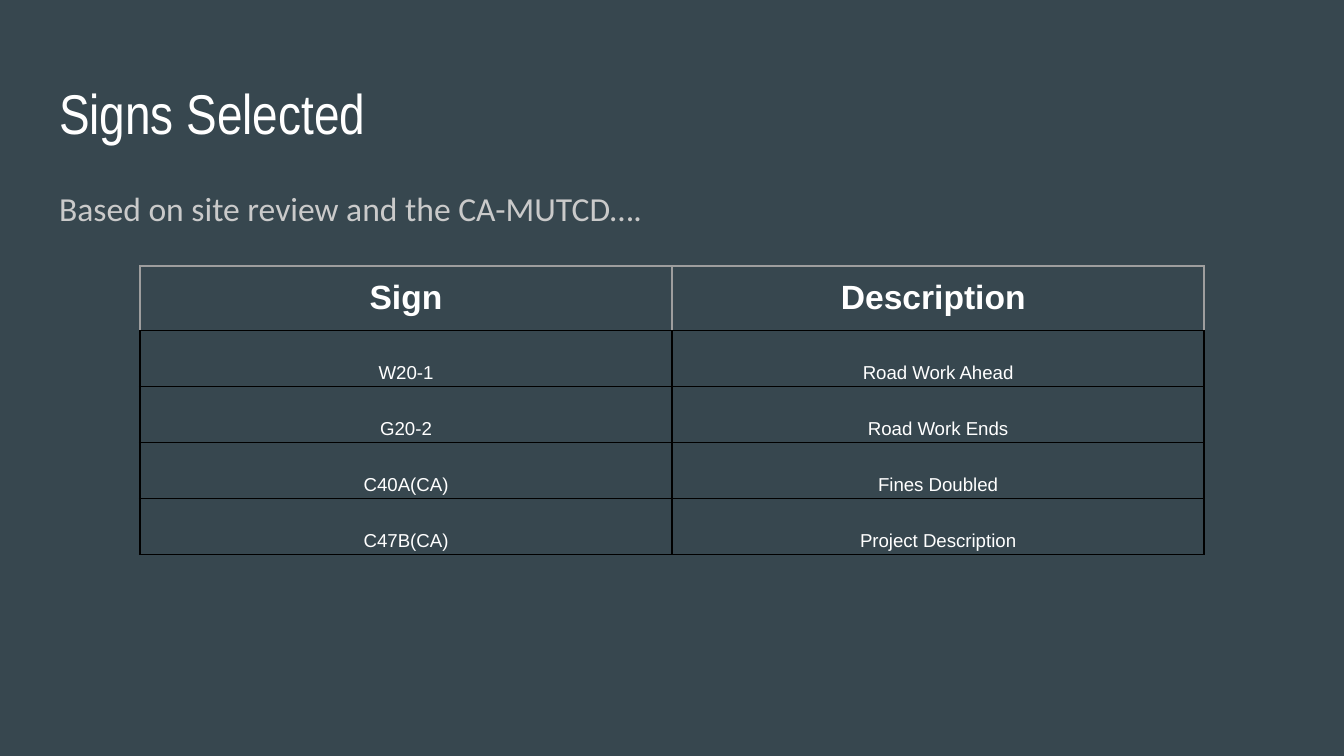
import lxml.etree
import pptx
import pptx.dml.color
import pptx.enum.text
import pptx.oxml.ns
import pptx.util

Pt = pptx.util.Pt
PP_ALIGN = pptx.enum.text.PP_ALIGN
MSO_ANCHOR = pptx.enum.text.MSO_ANCHOR
qn = pptx.oxml.ns.qn

COLORS = {
    "background": "37474F",
    "heading": "FFFFFF",
    "body": "CACACA",
    "header_border": "9E9E9E",
    "border": "000000",
}


def add_run(paragraph, text, font_name, size, color, bold=False):
    run = paragraph.add_run()
    run.text = text
    run.font.name = font_name
    run.font.size = Pt(size)
    run.font.bold = bold
    run.font.color.rgb = pptx.dml.color.RGBColor.from_string(COLORS[color])


def add_border(cell, side, color, width):
    properties = cell._tc.get_or_add_tcPr()
    line = lxml.etree.SubElement(properties, qn("a:ln" + side), w=str(Pt(width)))
    fill = lxml.etree.SubElement(line, qn("a:solidFill"))
    lxml.etree.SubElement(fill, qn("a:srgbClr"), val=COLORS[color])


presentation = pptx.Presentation()
presentation.slide_width = Pt(720)
presentation.slide_height = Pt(405)
slide = presentation.slides.add_slide(presentation.slide_layouts[1])
slide.background.fill.solid()
slide.background.fill.fore_color.rgb = pptx.dml.color.RGBColor.from_string(COLORS["background"])

title = slide.shapes.title
body = slide.placeholders[1]
for shape, top, height in [(title, 35, 45.1), (body, 90, 269)]:
    shape.left, shape.top, shape.width, shape.height = Pt(24.5), Pt(top), Pt(671), Pt(height)
    frame = shape.text_frame
    frame.auto_size = pptx.enum.text.MSO_AUTO_SIZE.NONE
    frame.word_wrap = True
    frame.vertical_anchor = MSO_ANCHOR.TOP
    frame.margin_left = frame.margin_right = Pt(7.2)
    frame.margin_top = frame.margin_bottom = Pt(7.2)
    frame.paragraphs[0].alignment = PP_ALIGN.LEFT
    frame.paragraphs[0].space_before = Pt(0)

add_run(title.text_frame.paragraphs[0], "Signs Selected", "Arial Narrow", 30, "heading")

paragraph = body.text_frame.paragraphs[0]
paragraph.line_spacing = 1.15
paragraph.space_after = Pt(16)
paragraph_properties = paragraph._p.get_or_add_pPr()
paragraph_properties.set("marL", "0")
paragraph_properties.set("indent", "0")
lxml.etree.SubElement(paragraph_properties, qn("a:buNone"))
add_run(paragraph, "Based on site review and the CA-MUTCD….", "Calibri", 18, "body")

signs = [
    ("Sign", "Description "),
    ("W20-1", "Road Work Ahead"),
    ("G20-2", "Road Work Ends"),
    ("C40A(CA)", "Fines Doubled"),
    ("C47B(CA)", "Project Description"),
]
table = slide.shapes.add_table(len(signs), 2, Pt(75), Pt(142.5), Pt(570), Pt(150)).table
table.first_row = False
table.horz_banding = False

for row_index, row in enumerate(signs):
    is_header = row_index == 0
    table.rows[row_index].height = Pt(30)
    for column_index, text in enumerate(row):
        cell = table.cell(row_index, column_index)
        cell.margin_left = cell.margin_right = Pt(7.2 if is_header else 2.16)
        cell.margin_top = cell.margin_bottom = Pt(7.2 if is_header else 1.44)
        cell.vertical_anchor = MSO_ANCHOR.TOP if is_header else MSO_ANCHOR.BOTTOM
        outer_side = "LR"[column_index]
        for side in "LRTB":
            color = "header_border" if is_header and side != "B" else "border"
            width = 1.5 if side == outer_side and not is_header else 0.75
            add_border(cell, side, color, width)
        cell.fill.background()

        paragraph = cell.text_frame.paragraphs[0]
        paragraph.alignment = PP_ALIGN.CENTER
        paragraph.line_spacing = 1.0 if is_header else 1.15
        add_run(paragraph, text, "Arial", 18 if is_header else 10, "heading", is_header)

presentation.save("out.pptx")
